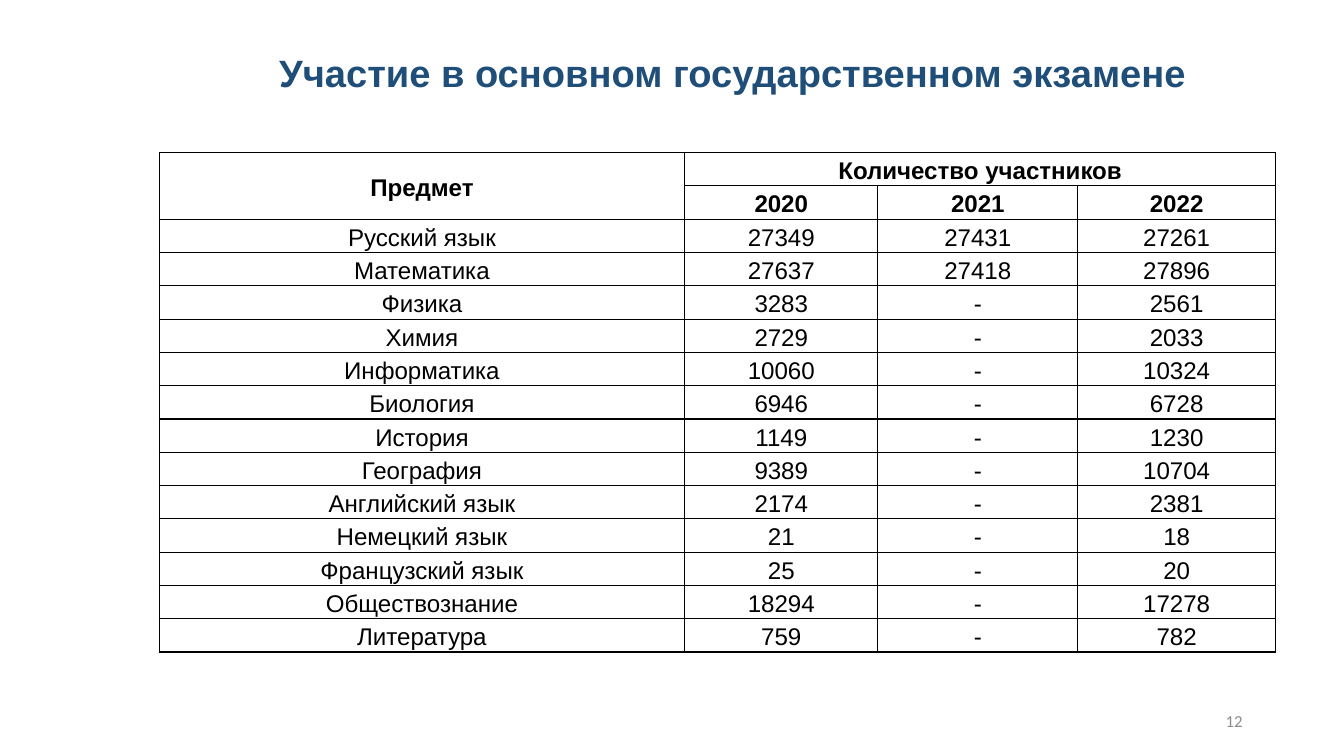
from lxml.etree import SubElement as Sub
from pptx import Presentation
from pptx.dml.color import RGBColor as RGB
from pptx.enum.text import MSO_ANCHOR as Anchor, PP_ALIGN as Align
from pptx.oxml.ns import qn
from pptx.util import Inches, Pt

# Content
TITLE = "Участие в основном государственном экзамене"
PAGE = "12"
ROWS = [
    ("Предмет", "Количество участников", "", ""),
    ("", "2020", "2021", "2022"),
    ("Русский язык", "27349", "27431", "27261"),
    ("Математика", "27637", "27418", "27896"),
    ("Физика", "3283", "-", "2561"),
    ("Химия", "2729", "-", "2033"),
    ("Информатика", "10060", "-", "10324"),
    ("Биология", "6946", "-", "6728"),
    ("История", "1149", "-", "1230"),
    ("География", "9389", "-", "10704"),
    ("Английский язык", "2174", "-", "2381"),
    ("Немецкий язык", "21", "-", "18"),
    ("Французский язык", "25", "-", "20"),
    ("Обществознание", "18294", "-", "17278"),
    ("Литература", "759", "-", "782"),
]
HEADS = 2

# Layout and format
WIDTHS = (5.75, 2.11, 2.19, 2.16)
LEFT, TOP, HEIGHT = 1.74, 1.67, 5.46
BLACK, WHITE = RGB(0, 0, 0), RGB(255, 255, 255)
NAVY, GRAY = RGB(0x1F, 0x4E, 0x79), RGB(0x8C, 0x8C, 0x8C)
HEAD_FONT = {"name": "Arial", "size": Pt(30), "bold": True}
CELL_FONT = {"name": "Arial", "size": Pt(19)}
PAGE_FONT = {"name": "Calibri", "size": Pt(13.2)}
CELL_BOX = {
    "vertical_anchor": Anchor.MIDDLE,
    "margin_left": Inches(0.07), "margin_right": Inches(0.07),
    "margin_top": 0, "margin_bottom": 0,
}


def put(obj, attrs):
    for key, val in attrs.items():
        setattr(obj, key, val)


def write(frame, text, font, color, align):
    para = frame.paragraphs[0]
    para.alignment = align
    run = para.add_run()
    run.text = text
    put(run.font, font)
    run.font.color.rgb = color
    return para


def add_text(slide, box, text, font, color, align, anchor):
    frame = slide.shapes.add_textbox(*map(Inches, box)).text_frame
    put(frame, {"word_wrap": True, "vertical_anchor": anchor})
    write(frame, text, font, color, align)


def add_edges(cell):
    props = cell._tc.get_or_add_tcPr()
    for pos, side in enumerate(("lnL", "lnR", "lnT", "lnB")):
        line = props.makeelement(qn("a:" + side), {"w": str(Pt(1))})
        fill = Sub(line, qn("a:solidFill"))
        Sub(fill, qn("a:srgbClr"), val=str(BLACK))
        props.insert(pos, line)


def add_grid(slide):
    size = (LEFT, TOP, sum(WIDTHS), HEIGHT)
    grid = slide.shapes.add_table(
        len(ROWS), len(WIDTHS), *map(Inches, size)).table
    put(grid, {"first_row": False, "horz_banding": False})
    for col, width in zip(grid.columns, WIDTHS):
        col.width = Inches(width)
    for row in grid.rows:
        row.height = Inches(HEIGHT / len(ROWS))

    # Header spans
    grid.cell(0, 0).merge(grid.cell(1, 0))
    grid.cell(0, 1).merge(grid.cell(0, 3))

    # Cells
    for r, row in enumerate(ROWS):
        for c, text in enumerate(row):
            cell = grid.cell(r, c)
            put(cell, CELL_BOX)
            cell.fill.solid()
            cell.fill.fore_color.rgb = WHITE
            add_edges(cell)
            if text:
                font = {**CELL_FONT, "bold": r < HEADS}
                para = write(cell.text_frame, text, font, BLACK, Align.CENTER)
                para.line_spacing = 1.15


def main():
    deck = Presentation()
    put(deck, {"slide_width": Inches(14.7), "slide_height": Inches(8.27)})
    slide = deck.slides.add_slide(deck.slide_layouts[6])
    add_text(slide, (10.38, 7.66, 3.31, 0.44), PAGE, PAGE_FONT, GRAY,
             Align.RIGHT, Anchor.MIDDLE)
    add_text(slide, (1.69, 0.49, 12.65, 0.61), TITLE, HEAD_FONT, NAVY,
             Align.CENTER, Anchor.TOP)
    add_grid(slide)
    deck.save("out.pptx")


if __name__ == "__main__":
    main()
